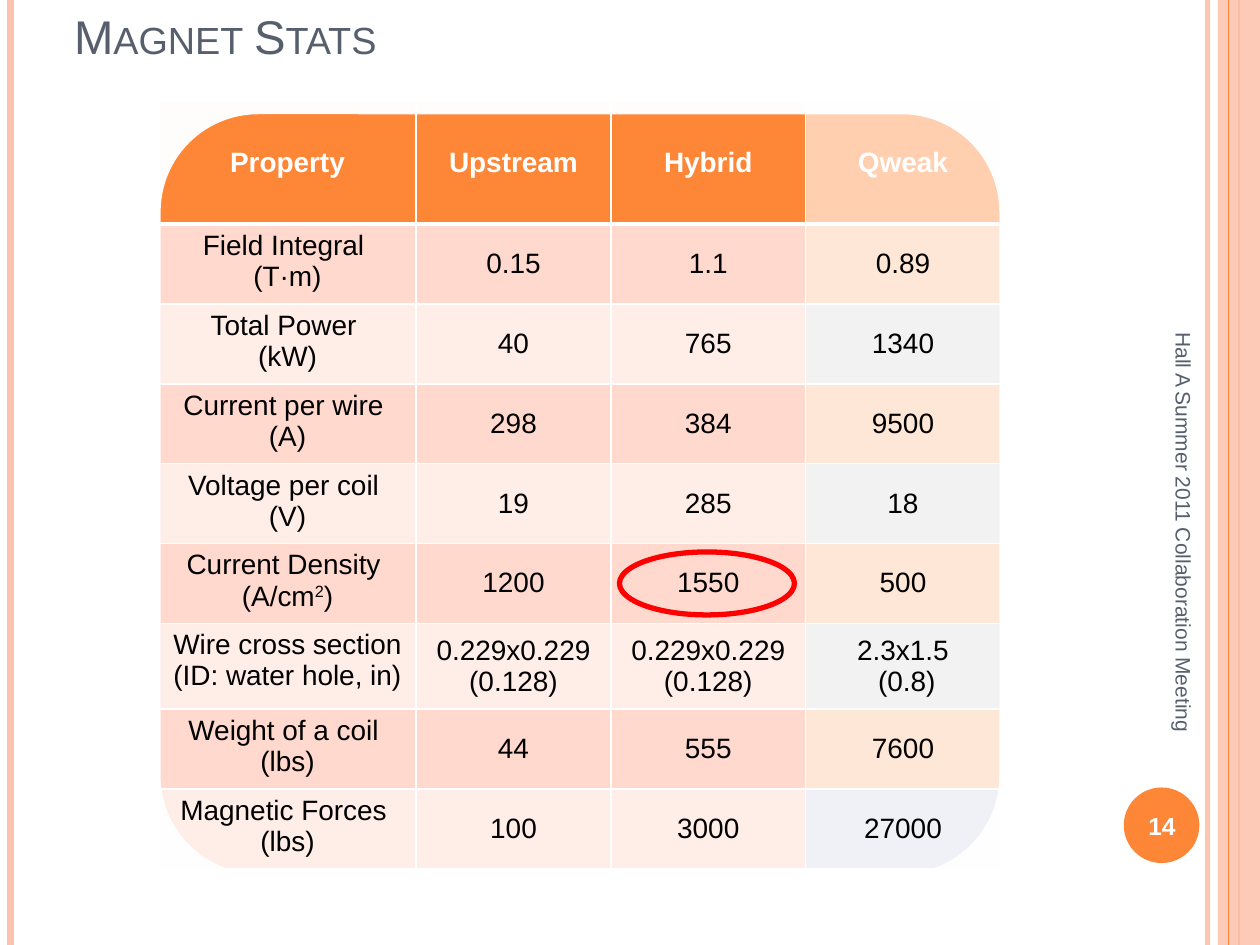
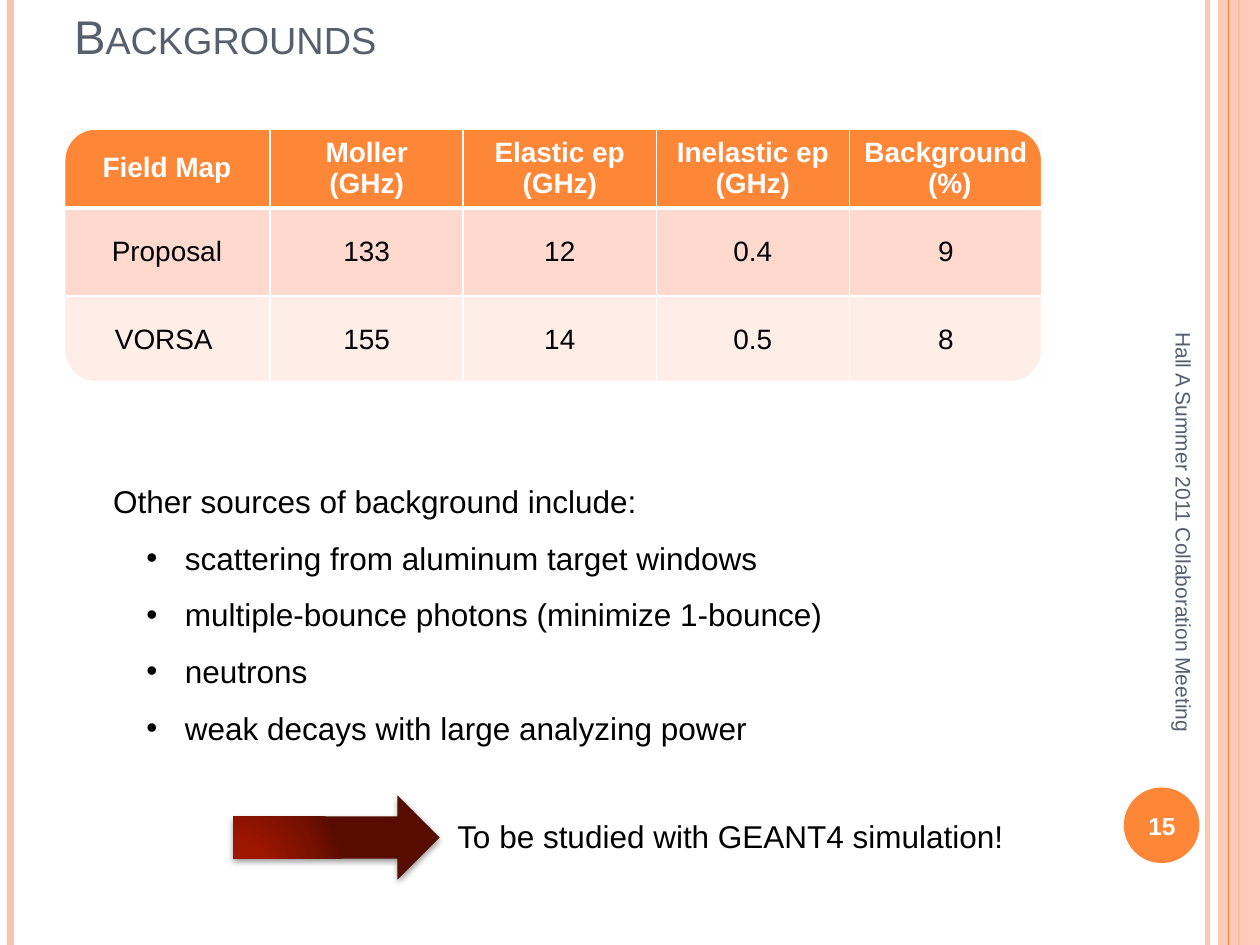
from lxml import etree
from pptx import Presentation
from pptx.dml.color import RGBColor
from pptx.enum.shapes import MSO_CONNECTOR, MSO_SHAPE
from pptx.enum.text import MSO_ANCHOR, PP_ALIGN
from pptx.oxml import parse_xml
from pptx.oxml.ns import qn
from pptx.util import Pt

STRAIGHT = MSO_CONNECTOR.STRAIGHT
RECTANGLE, ELLIPSE = MSO_SHAPE.RECTANGLE, MSO_SHAPE.OVAL
ROUNDED, RIGHT_ARROW = MSO_SHAPE.ROUNDED_RECTANGLE, MSO_SHAPE.RIGHT_ARROW
LEFT, CENTER = PP_ALIGN.LEFT, PP_ALIGN.CENTER
TOP, MIDDLE, BOTTOM = MSO_ANCHOR.TOP, MSO_ANCHOR.MIDDLE, MSO_ANCHOR.BOTTOM

# Shared look
FONT = "Arial"
WHITE, BLACK, RED = "FFFFFF", "000000", "FF0000"
ORANGE, PEACH, SLATE = "FE8637", "FEC3AE", "575F6D"
PALE_ORANGE = "FFCFAF"
BANDS = ("FFD9CE", "FFEDE8")
QWEAK_BANDS = ("FFE7D7", "F2F2F2")
QWEAK_LAST = "EFF1F7"
SLIDE_WIDTH, SLIDE_HEIGHT = 720, 540
MEETING = "Hall A Summer 2011 Collaboration Meeting"
NS = 'xmlns:a="http://schemas.openxmlformats.org/drawingml/2006/main"'

MAGNET_STATS = [
    ["Property", "Upstream", "Hybrid", "Qweak"],
    ["Field Integral \n(T·m)", "0.15", "1.1", "0.89"],
    ["Total Power \n(kW)", "40", "765", "1340"],
    ["Current per wire \n(A)", "298", "384", "9500"],
    ["Voltage per coil \n(V)", "19", "285", "18"],
    ["Current Density \n(A/cm^2^)", "1200", "1550", "500"],
    ["Wire cross section \n(ID: water hole, in) ", "0.229x0.229\n(0.128)",
     "0.229x0.229\n(0.128)", "2.3x1.5\n (0.8)"],
    ["Weight of a coil \n(lbs)", "44", "555", "7600"],
    ["Magnetic Forces \n(lbs)", "100", "3000", "27000"],
]
BACKGROUND_RATES = [
    ["Field Map", "Moller\n(GHz)", "Elastic ep (GHz)", "Inelastic ep (GHz)",
     "Background\n (%)"],
    ["Proposal", "133", "12", "0.4", "9"],
    ["VORSA ", "155", "14", "0.5", "8"],
]
OTHER_SOURCES = [
    "scattering from aluminum target windows",
    "multiple-bounce photons (minimize 1-bounce)",
    "neutrons",
    "weak decays with large analyzing power",
]


def rgb(code):
    return RGBColor.from_string(code)


def set_opacity(element, percent):
    color = element.find(".//" + qn("a:srgbClr"))
    etree.SubElement(color, qn("a:alpha"), val=str(percent * 1000))


def format_runs(paragraph, size, color, bold=False):
    for run in paragraph.runs:
        run.font.name = FONT
        run.font.size = Pt(size)
        run.font.bold = bold
        run.font.color.rgb = rgb(color)


def add_line(slide, x, color, width, opacity=100):
    """Vertical rule over the full slide height."""
    rule = slide.shapes.add_connector(STRAIGHT, Pt(x), 0, Pt(x), Pt(SLIDE_HEIGHT))
    rule.line.color.rgb = rgb(color)
    rule.line.width = Pt(width)
    properties = rule._element.spPr
    if opacity < 100:
        set_opacity(properties, opacity)
    etree.SubElement(properties, qn("a:effectLst"))


def add_shape(slide, kind, box, fill=None, line=None, width=1):
    shape = slide.shapes.add_shape(kind, *map(Pt, box))
    shape.shadow.inherit = False
    if fill:
        shape.fill.solid()
        shape.fill.fore_color.rgb = rgb(fill)
    else:
        shape.fill.background()
    if line:
        shape.line.color.rgb = rgb(line)
        shape.line.width = Pt(width)
    else:
        shape.line.fill.background()
    return shape


def add_text(slide, box, lines, size, color, bold=False, align=LEFT,
             anchor=TOP, wrap=True):
    label = slide.shapes.add_textbox(*map(Pt, box))
    frame = label.text_frame
    frame.word_wrap = wrap
    frame.vertical_anchor = anchor
    frame.text = "\n".join(lines)
    for paragraph in frame.paragraphs:
        paragraph.alignment = align
        format_runs(paragraph, size, color, bold)
    return label


def add_title(slide, title):
    heading = add_text(slide, (35.2, 0, 588, 40.3), [title], 27, SLATE, anchor=BOTTOM)
    run = heading.text_frame.paragraphs[0].runs[0]
    run.font._element.set("cap", "small")


def add_frame(slide, number):
    """Side bands, page number and meeting name."""
    add_line(slide, 690, PEACH, 3, opacity=93)
    add_line(slide, 6, PEACH, 4.5)
    add_line(slide, 708, ORANGE, 1.5)
    band = add_shape(slide, RECTANGLE, (696, 0, SLIDE_WIDTH - 696, SLIDE_HEIGHT), PEACH)
    set_opacity(band._element.spPr, 87)
    add_line(slide, 702, ORANGE, 0.75)
    add_shape(slide, ELLIPSE, (642.2, 450, 43.2, 43.2), ORANGE)
    add_text(slide, (640, 451.5, 48, 41), [str(number)], 14, WHITE, bold=True,
             align=CENTER, anchor=MIDDLE)
    meeting = add_text(slide, (546.5, 298.4, 260, 28.8), [MEETING], 12, SLATE,
                       anchor=MIDDLE)
    meeting.rotation = 90


def set_borders(cell, bottom_width):
    properties = cell._tc.get_or_add_tcPr()
    widths = {"lnL": 1, "lnR": 1, "lnT": 1, "lnB": bottom_width}
    for position, (side, width) in enumerate(widths.items()):
        border = parse_xml(
            f'<a:{side} {NS} w="{Pt(width)}"><a:solidFill>'
            f'<a:srgbClr val="{WHITE}"/></a:solidFill></a:{side}>')
        properties.insert(position, border)


def fill_cell(cell, text, fill, header, anchor):
    cell.text_frame.text = text
    cell.vertical_anchor = anchor
    cell.fill.solid()
    cell.fill.fore_color.rgb = rgb(fill)
    set_borders(cell, 3 if header else 1)
    for paragraph in cell.text_frame.paragraphs:
        paragraph.alignment = CENTER
        # Text between carets is raised
        base, *raised = paragraph.text.split("^")
        if raised:
            paragraph.text = base
            for part in raised:
                paragraph.add_run().text = part
            paragraph.runs[1].font._element.set("baseline", "30000")
        format_runs(paragraph, 16, WHITE if header else BLACK, header)


def add_stats_table(slide, box, data, widths, heights, label_anchor=MIDDLE):
    holder = slide.shapes.add_table(len(data), len(data[0]), *map(Pt, box))
    table = holder.table
    table.horz_banding = False
    for column, width in zip(table.columns, widths):
        column.width = Pt(width)
    for row, height in zip(table.rows, heights):
        row.height = Pt(height)
    for r, values in enumerate(data):
        fill = BANDS[(r - 1) % 2] if r else ORANGE
        for c, text in enumerate(values):
            anchor = label_anchor if r and c == 0 else MIDDLE
            fill_cell(table.cell(r, c), text, fill, r == 0, anchor)
    return table


def add_rounding(slide, box, width):
    """Thick white outline that rounds the corners of a table."""
    outline = add_shape(slide, ROUNDED, box, line=WHITE, width=width)
    set_opacity(outline._element.spPr, 98)


def add_bullet(paragraph):
    properties = paragraph._p.get_or_add_pPr()
    properties.set("marL", str(Pt(41)))
    properties.set("indent", str(-Pt(22)))
    etree.SubElement(properties, qn("a:buFont"), typeface=FONT)
    etree.SubElement(properties, qn("a:buChar"), char="•")


def add_glossy_arrow(slide, box):
    arrow = add_shape(slide, RIGHT_ARROW, box)
    properties = arrow._element.spPr
    stops = ((0, "A41700"), (30, "9F1600"), (75, "771100"), (100, "580C00"))
    stop_xml = "".join(f'<a:gs pos="{place * 1000}"><a:srgbClr val="{color}"/></a:gs>'
                       for place, color in stops)
    gradient = parse_xml(
        f'<a:gradFill {NS} rotWithShape="1"><a:gsLst>{stop_xml}</a:gsLst>'
        '<a:path path="circle"><a:fillToRect l="5000" t="100000" r="120000" b="10000"/>'
        '</a:path></a:gradFill>')
    properties.replace(properties.find(qn("a:noFill")), gradient)
    shadow = parse_xml(
        f'<a:outerShdw {NS} blurRad="{Pt(4)}" dist="{Pt(1.6)}" dir="5400000" '
        f'rotWithShape="0"><a:srgbClr val="{BLACK}"><a:alpha val="42000"/>'
        '</a:srgbClr></a:outerShdw>')
    properties.find(qn("a:effectLst")).append(shadow)


def build_magnet_stats(slide):
    add_frame(slide, 14)
    heights = [70] + [42.7] * 5 + [49] + [42.7] * 2
    table = add_stats_table(slide, (90.8, 58.1, 481, 418), MAGNET_STATS,
                            [147] + [111.3] * 3, heights, label_anchor=TOP)
    # Qweak column has its own tints
    last = len(MAGNET_STATS) - 1
    for r in range(last + 1):
        tint = QWEAK_BANDS[(r - 1) % 2] if r else PALE_ORANGE
        fill = QWEAK_LAST if r == last else tint
        table.cell(r, 3).fill.fore_color.rgb = rgb(fill)
    # Highlight of the hybrid current density
    add_shape(slide, ELLIPSE, (354, 315.4, 100, 36), line=RED, width=3)
    add_rounding(slide, (66.8, 40.3, 529.2, 483.8), 50)
    add_title(slide, "Magnet Stats")


def build_backgrounds(slide):
    add_frame(slide, 15)
    add_stats_table(slide, (36.4, 73.2, 559, 146), BACKGROUND_RATES,
                    [118] + [110.35] * 4, [45, 50.3, 50.3])
    # Other sources
    sources = add_text(slide, (57.6, 261, 430, 170.6),
                       ["Other sources of background include:"] + OTHER_SOURCES,
                       18, BLACK, wrap=False)
    for position, paragraph in enumerate(sources.text_frame.paragraphs):
        paragraph.line_spacing = 1.5
        if position:
            paragraph.level = 1
            add_bullet(paragraph)
    # Outlook
    add_text(slide, (254.2, 463.3, 329.8, 28.8),
             ["To be studied with GEANT4 simulation!"], 18, BLACK, wrap=False)
    add_glossy_arrow(slide, (133.2, 454.5, 118, 48.2))
    add_rounding(slide, (27.4, 64.2, 577.4, 163.4), 20)
    add_title(slide, "Backgrounds")


def main():
    deck = Presentation()
    deck.slide_width, deck.slide_height = Pt(SLIDE_WIDTH), Pt(SLIDE_HEIGHT)
    blank = deck.slide_layouts[6]
    for build in (build_magnet_stats, build_backgrounds):
        build(deck.slides.add_slide(blank))
    deck.save("out.pptx")


if __name__ == "__main__":
    main()
